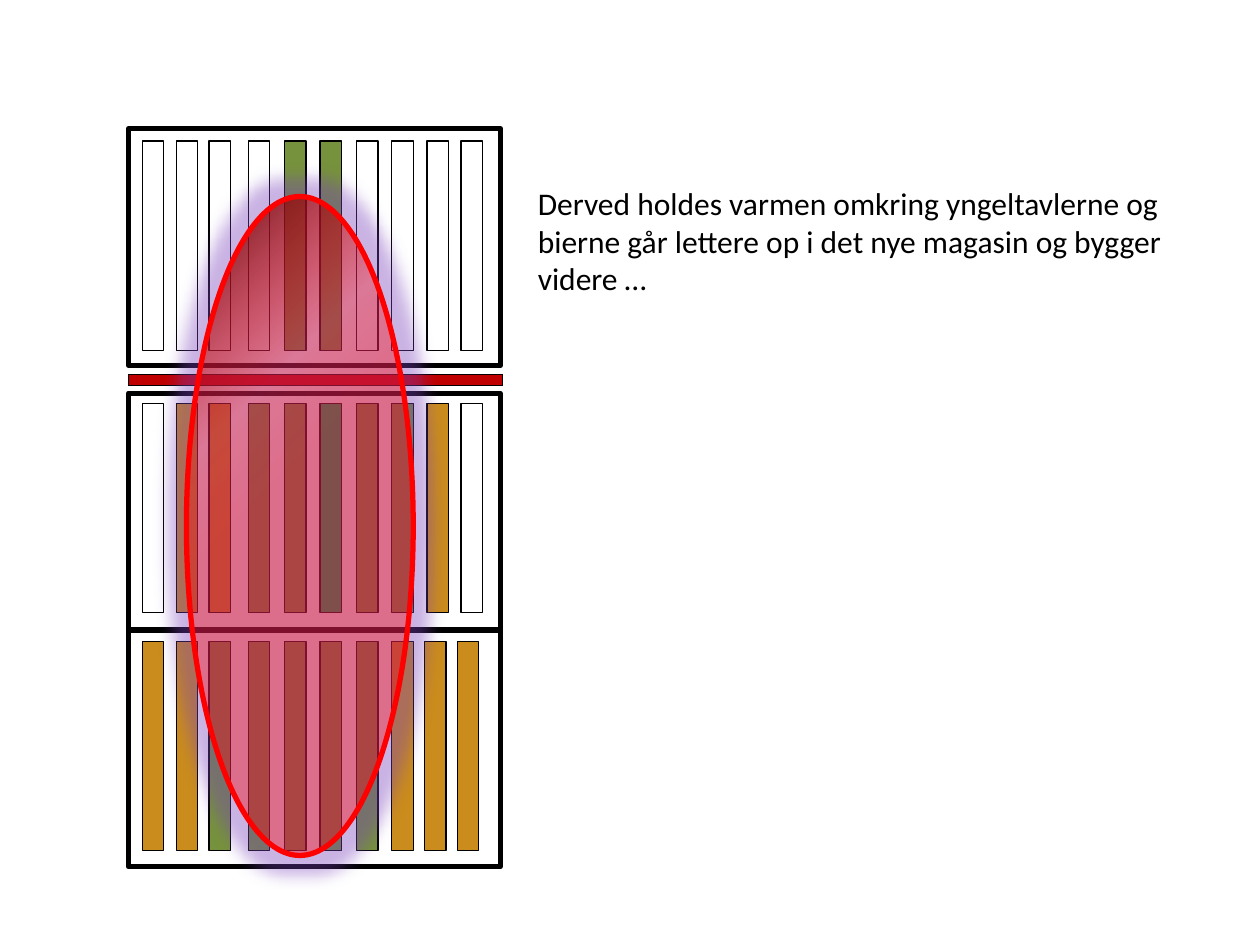
from dataclasses import dataclass

from lxml.etree import SubElement
from pptx import Presentation
from pptx.dml.color import RGBColor
from pptx.enum.shapes import MSO_SHAPE
from pptx.enum.text import MSO_AUTO_SIZE
from pptx.oxml.ns import qn
from pptx.util import Inches, Pt

COMB = {"-": None, "g": "76923C", "a": "CA8C1C", "e": "00B050"}
COLS = (1.13, 1.4, 1.66, 1.97, 2.26, 2.54, 2.83, 3.11, 3.39, 3.66)
LOW = COLS[:8] + (3.37, 3.63)
NOTE = ("Derved holdes varmen omkring yngeltavlerne og bierne går lettere "
        "op i det nye magasin og bygger videre …")


@dataclass
class Hive:
    """A hive box with one letter of comb colour per frame."""
    top: float
    inset: float
    combs: str
    cols: tuple = COLS


HIVES = (
    Hive(5, 0.09, "aagggggaaa", LOW),
    Hive(1.02, 0.1, "----gg----"),
    Hive(3.12, 0.08, "-aaggegga-"),
)


def color(code: str) -> RGBColor:
    """Turn a hex string into a colour."""
    return RGBColor.from_string(code)


def style(obj, vals: dict) -> None:
    """Set each named value on an object."""
    for name, val in vals.items():
        setattr(obj, name, val)


def draw(home, kind, spot: tuple, fill: str | None, edge: str, width: float):
    """Add a filled and outlined shape at left, top, width, height."""
    shape = home.add_shape(kind, *map(Inches, spot))
    shape.shadow.inherit = False
    if fill:
        shape.fill.solid()
        shape.fill.fore_color.rgb = color(fill)
    else:
        shape.fill.background()
    shape.line.color.rgb = color(edge)
    shape.line.width = Pt(width)
    return shape


def stack(slide, hive: Hive) -> None:
    """Draw a hive box and its ten frames as a group."""
    group = slide.shapes.add_group_shape().shapes
    draw(group, MSO_SHAPE.RECTANGLE, (1.02, hive.top, 2.95, 1.88),
         "FFFFFF", "000000", 3)
    for left, comb in zip(hive.cols, hive.combs):
        draw(group, MSO_SHAPE.RECTANGLE, (left, hive.top + hive.inset, 0.17, 1.66),
             COMB[comb], "000000", 0.75)


def tint(home, code: str, alpha: int) -> None:
    """Add a see-through colour element, alpha in percent."""
    rgb = SubElement(home, qn("a:srgbClr"), val=code)
    SubElement(rgb, qn("a:alpha"), val=str(alpha * 1000))


def warm(slide) -> None:
    """Draw the glowing oval of heat."""
    oval = draw(slide.shapes, MSO_SHAPE.OVAL, (1.48, 1.56, 1.8, 5.23),
                "FF0000", "FF0000", 3)
    props = oval._element.spPr
    grad = SubElement(props, qn("a:gradFill"), rotWithShape="1")
    props.replace(props.find(qn("a:solidFill")), grad)
    stops = SubElement(grad, qn("a:gsLst"))
    for pos, code, alpha in ((58, "FF0000", 38), (70, "FF0300", 33),
                             (100, "4D0808", 100)):
        tint(SubElement(stops, qn("a:gs"), pos=str(pos * 1000)), code, alpha)
    ring = SubElement(grad, qn("a:path"), path="circle")
    SubElement(ring, qn("a:fillToRect"), l="100000", t="100000")
    glow = SubElement(props.find(qn("a:effectLst")), qn("a:glow"),
                      rad=str(Inches(0.25)))
    tint(glow, "7A41BB", 40)


def write(slide) -> None:
    """Add the indented note beside the hive."""
    frame = slide.shapes.add_textbox(
        *map(Inches, (3.67, 1.41, 6.02, 1.01))).text_frame
    style(frame, {"word_wrap": True, "auto_size": MSO_AUTO_SIZE.SHAPE_TO_FIT_TEXT})
    para = frame.paragraphs[0]
    style(para, {"text": NOTE, "level": 1})
    para._p.get_or_add_pPr().set("marL", str(Inches(0.5)))
    font = para.runs[0].font
    style(font, {"name": "Calibri", "size": Pt(18)})
    font.color.rgb = color("000000")


def main() -> None:
    """Build and save the slide."""
    deck = Presentation()
    style(deck, {"slide_width": Inches(10), "slide_height": Inches(7.5)})
    slide = deck.slides.add_slide(deck.slide_layouts[6])
    bar = draw(slide.shapes, MSO_SHAPE.LINE_CALLOUT_1, (1.02, 2.97, 2.97, 0.09),
               "C00000", "000000", 0.75)
    for spot, val in enumerate((2, 0.04, 2, 0.99)):
        bar.adjustments[spot] = val
    for hive in HIVES:
        stack(slide, hive)
    write(slide)
    warm(slide)
    deck.save("out.pptx")


if __name__ == "__main__":
    main()
